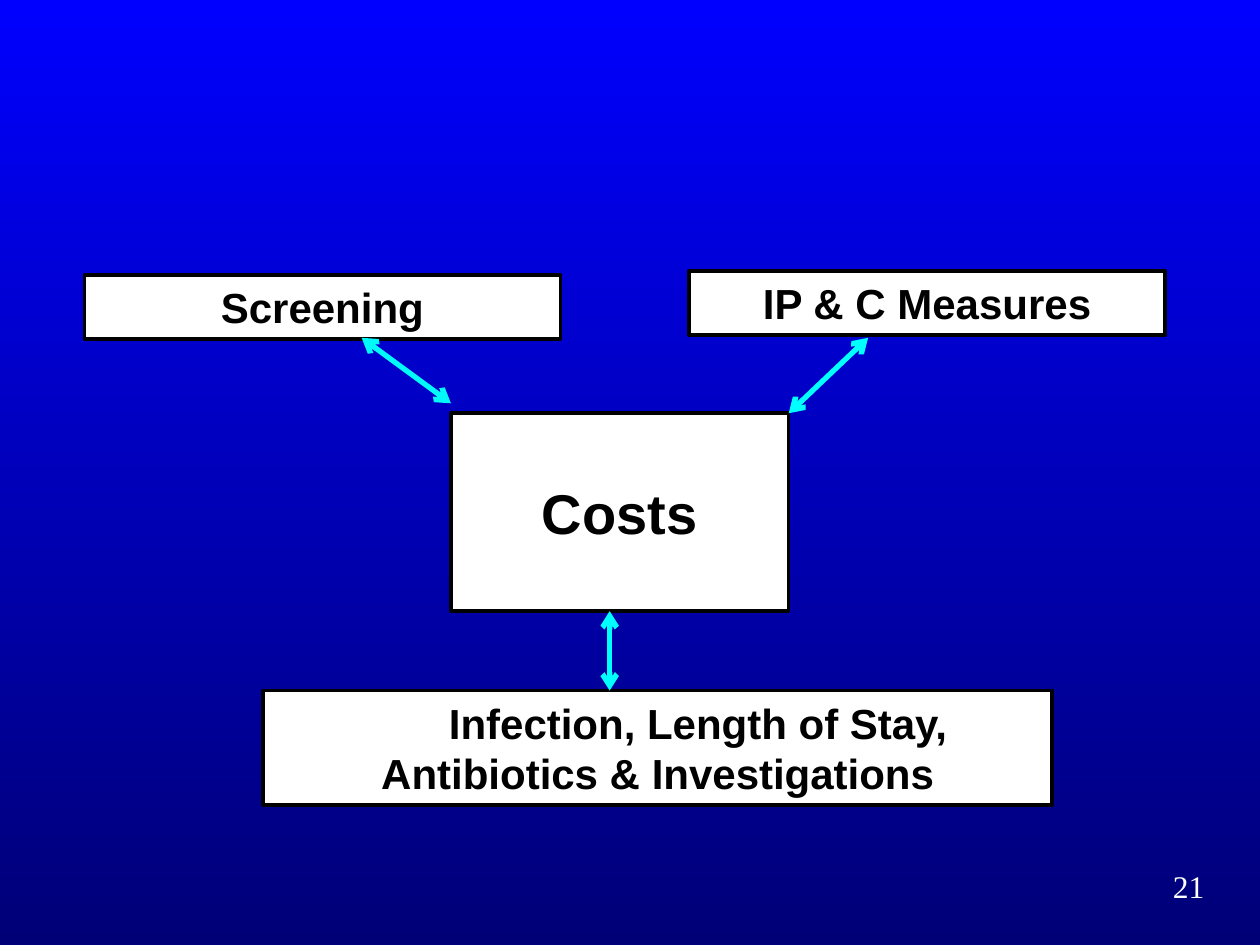
"""Build a slide that links costs to screening, control measures and infection."""
from lxml import etree
from pptx import Presentation
from pptx.dml.color import RGBColor
from pptx.enum.shapes import MSO_CONNECTOR, MSO_SHAPE
from pptx.enum.text import MSO_ANCHOR, PP_ALIGN
from pptx.oxml.ns import qn
from pptx.util import Cm, Pt

RECTANGLE = MSO_SHAPE.RECTANGLE
STRAIGHT = MSO_CONNECTOR.STRAIGHT
MIDDLE, TOP = MSO_ANCHOR.MIDDLE, MSO_ANCHOR.TOP
CENTER, RIGHT = PP_ALIGN.CENTER, PP_ALIGN.RIGHT

BLACK = RGBColor(0x00, 0x00, 0x00)
WHITE = RGBColor(0xFF, 0xFF, 0xFF)
CYAN = RGBColor(0x00, 0xFF, 0xFF)
LIGHT_CYAN = RGBColor(0x00, 0xF9, 0xF9)
BRIGHT_BLUE = RGBColor(0x00, 0x00, 0xFF)
DARK_BLUE = RGBColor(0x00, 0x00, 0x76)

# text, (left, top, width, height), font size, line width, first-line indent
BOXES = [
    ("Screening", (1.7, 5.54, 9.6, 1.3), 24, 2, 0),
    ("IP & C Measures", (13.89, 5.46, 9.6, 1.3), 24, 2, 0),
    ("Costs", (9.09, 8.33, 6.81, 3.99), 32, 2, 0),
    ("Infection, Length of Stay, Antibiotics & Investigations",
     (5.31, 13.92, 15.9, 2.31), 24, 2.25, 1.63),
]
ARROWS = [
    ((7.29, 6.81), (9.09, 8.13), LIGHT_CYAN),
    ((17.5, 6.81), (15.9, 8.33), CYAN),
    ((12.29, 12.32), (12.29, 13.92), CYAN),
]
PAGE_NUMBER = ("21", (19.25, 17.35, 5.28, 1.27))


def paint_background(slide):
    fill = slide.background.fill
    fill.gradient()
    fill.gradient_angle = 270
    for stop, position, color in zip(fill.gradient_stops, (0, 1), (BRIGHT_BLUE, DARK_BLUE)):
        stop.position = position
        stop.color.rgb = color


def write_text(shape, text, size, font_name, color, bold, alignment, anchor):
    frame = shape.text_frame
    frame.word_wrap = True
    frame.vertical_anchor = anchor
    paragraph = frame.paragraphs[0]
    paragraph.alignment = alignment
    run = paragraph.add_run()
    run.text = text
    run.font.name = font_name
    run.font.size = Pt(size)
    run.font.bold = bold
    run.font.color.rgb = color
    return paragraph


def add_box(slide, text, bounds, size, line_width, indent):
    shape = slide.shapes.add_shape(RECTANGLE, *map(Cm, bounds))
    shape.shadow.inherit = False
    shape.fill.solid()
    shape.fill.fore_color.rgb = WHITE
    shape.line.color.rgb = BLACK
    shape.line.width = Pt(line_width)
    paragraph = write_text(shape, text, size, "Arial", BLACK, True, CENTER, MIDDLE)
    if indent:
        properties = paragraph._p.get_or_add_pPr()
        properties.set("marL", "0")
        properties.set("indent", str(Cm(indent)))


def add_arrow(slide, start, end, color):
    connector = slide.shapes.add_connector(STRAIGHT, *map(Cm, start + end))
    connector.line.color.rgb = color
    connector.line.width = Pt(3)
    line = connector.line._get_or_add_ln()
    for tag in ("a:headEnd", "a:tailEnd"):
        etree.SubElement(line, qn(tag), type="arrow")
    etree.SubElement(connector._element.spPr, qn("a:effectLst"))


def main():
    presentation = Presentation()
    presentation.slide_width, presentation.slide_height = Cm(25.4), Cm(19.05)
    slide = presentation.slides.add_slide(presentation.slide_layouts[6])
    paint_background(slide)
    for box in BOXES:
        add_box(slide, *box)
    for arrow in ARROWS:
        add_arrow(slide, *arrow)
    number, bounds = PAGE_NUMBER
    number_box = slide.shapes.add_textbox(*map(Cm, bounds))
    write_text(number_box, number, 18, "Times New Roman", WHITE, False, RIGHT, TOP)
    presentation.save("out.pptx")


if __name__ == "__main__":
    main()
